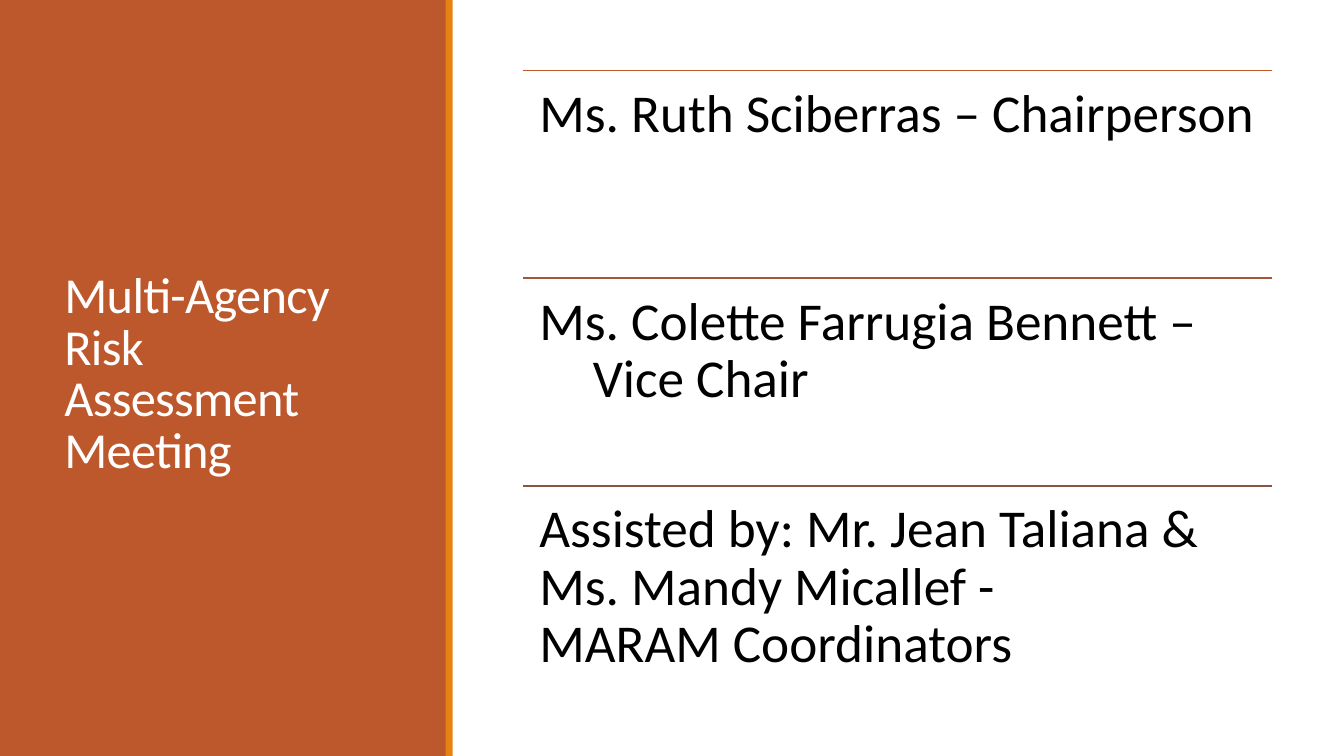
from pptx import Presentation
from pptx.dml.color import RGBColor
from pptx.enum.shapes import MSO_CONNECTOR, MSO_SHAPE
from pptx.enum.text import MSO_ANCHOR
from pptx.oxml.ns import qn
from pptx.util import Inches, Pt
from lxml import etree

WHITE = RGBColor(0xFF, 0xFF, 0xFF)
BLACK = RGBColor(0, 0, 0)
RUST = RGBColor(0xBD, 0x58, 0x2C)
BROWN = RGBColor(0xA0, 0x58, 0x37)
UMBER = RGBColor(0x86, 0x56, 0x40)
ORANGE = RGBColor(0xE4, 0x83, 0x12)

TITLE = "Multi-Agency Risk Assessment Meeting"
# Each member row: rule colour, then (text, left indent in inches) paragraphs
MEMBERS = [
    (RUST, [("Ms. Ruth Sciberras – Chairperson", 0)]),
    (BROWN, [("Ms. Colette Farrugia Bennett –", 0), ("Vice Chair", 0.53)]),
    (UMBER, [("Assisted by: Mr. Jean Taliana & Ms. Mandy Micallef -", 0),
             ("MARAM Coordinators", 0)]),
]
BARS = [(0, 4.43, RUST), (4.42, 0.07, ORANGE)]  # left, width, colour

SLIDE_WIDTH, SLIDE_HEIGHT = 13.33, 7.5
LIST_LEFT, LIST_TOP, LIST_WIDTH, ROW_HEIGHT = 5.19, 0.7, 7.43, 2.06


def add_bar(slide, left, width, color):
    bar = slide.shapes.add_shape(MSO_SHAPE.RECTANGLE, Inches(left), 0,
                                 Inches(width), Inches(SLIDE_HEIGHT))
    bar.shadow.inherit = False
    bar.fill.solid()
    bar.fill.fore_color.rgb = color
    bar.line.fill.background()


def add_rule(slide, top, color):
    rule = slide.shapes.add_connector(
        MSO_CONNECTOR.STRAIGHT, Inches(LIST_LEFT), Inches(top),
        Inches(LIST_LEFT + LIST_WIDTH), Inches(top))
    rule.line.color.rgb = color
    rule.line.width = Pt(1.25)
    etree.SubElement(rule._element.spPr, qn("a:effectLst"))


def add_text(slide, paragraphs, left, top, width, height, *, size, color,
             line_spacing, inset, anchor=MSO_ANCHOR.TOP, tracking=0):
    box = slide.shapes.add_textbox(Inches(left), Inches(top),
                                   Inches(width), Inches(height))
    frame = box.text_frame
    frame.word_wrap = True
    frame.vertical_anchor = anchor
    frame.margin_left = frame.margin_right = Inches(inset[0])
    frame.margin_top = frame.margin_bottom = Inches(inset[1])
    for index, (text, indent) in enumerate(paragraphs):
        paragraph = frame.add_paragraph() if index else frame.paragraphs[0]
        paragraph.line_spacing = line_spacing
        if indent:
            paragraph._p.get_or_add_pPr().set("marL", str(Inches(indent)))
        run = paragraph.add_run()
        run.text = text
        run.font.name = "Calibri"
        run.font.size = Pt(size)
        run.font.color.rgb = color
        if tracking:
            run.font._element.set("spc", str(round(tracking * 100)))


def main():
    presentation = Presentation()
    presentation.slide_width = Inches(SLIDE_WIDTH)
    presentation.slide_height = Inches(SLIDE_HEIGHT)
    slide = presentation.slides.add_slide(presentation.slide_layouts[6])

    for left, width, color in BARS:
        add_bar(slide, left, width, color)
    add_text(slide, [(TITLE, 0)], 0.54, 0.57, 3.37, 6.31, size=36, color=WHITE,
             line_spacing=0.85, inset=(0.1, 0.05), anchor=MSO_ANCHOR.MIDDLE,
             tracking=-0.5)
    for row, (color, paragraphs) in enumerate(MEMBERS):
        top = LIST_TOP + row * ROW_HEIGHT
        add_rule(slide, top, color)
        add_text(slide, paragraphs, LIST_LEFT, top, LIST_WIDTH, ROW_HEIGHT,
                 size=38, color=BLACK, line_spacing=0.9, inset=(0.16, 0.16))

    presentation.save("out.pptx")


if __name__ == "__main__":
    main()
